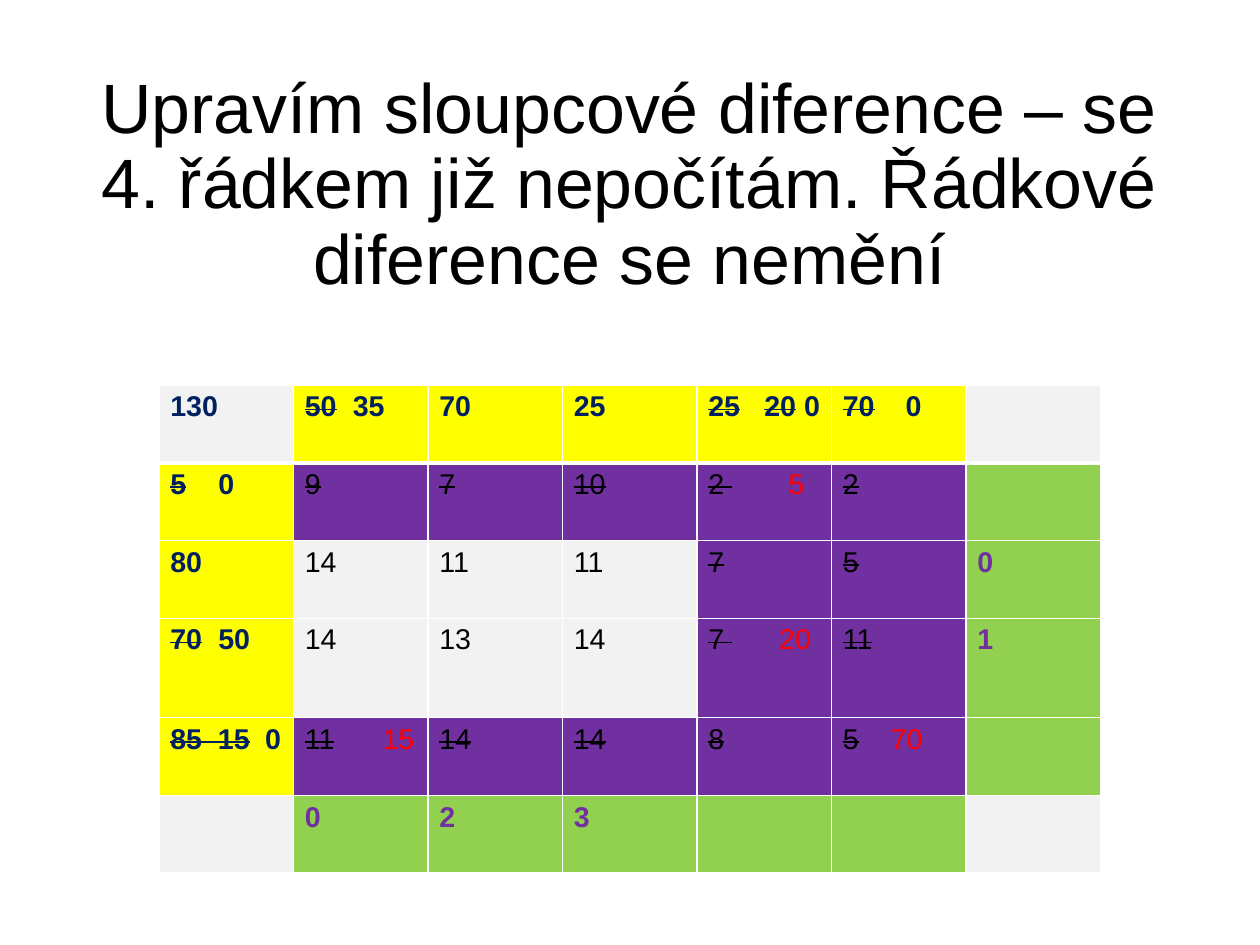
from lxml.etree import SubElement
from pptx import Presentation
from pptx.dml.color import RGBColor
from pptx.enum.text import MSO_ANCHOR, MSO_AUTO_SIZE, PP_ALIGN
from pptx.oxml.ns import qn
from pptx.util import Inches, Pt

BLACK = RGBColor(0x00, 0x00, 0x00)
WHITE = RGBColor(0xFF, 0xFF, 0xFF)
NAVY = RGBColor(0x00, 0x20, 0x60)
RED = RGBColor(0xFF, 0x00, 0x00)
GREY = RGBColor(0xF2, 0xF2, 0xF2)
YELLOW = RGBColor(0xFF, 0xFF, 0x00)
PURPLE = RGBColor(0x70, 0x30, 0xA0)
GREEN = RGBColor(0x92, 0xD0, 0x50)

# Parts of a cell stand at tab stops, split by "|".
# Marks: "-" struck out, "!" red, "+" after a plain space instead of a tab.
ROWS = [
    ["130", "-50|35", "70", "25", "-25|-20|+0", "-70|0", ""],
    ["-5|0", "-9", "-7", "-10", "-2 |!5", "-2", ""],
    ["80", "14", "11", "11", "-7", "-5", "0"],
    ["-70|50", "14", "13", "14", "-7 |!20", "-11", "1"],
    ["-85  15|0", "-11|!15", "-14", "-14", "-8", "-5|!70", ""],
    ["", "0", "2", "3", "", "", ""],
]
HEIGHTS = [0.68, 0.68, 0.68, 0.87, 0.68, 0.68]
WIDTH = 8.24
STOPS = {
    (0, 1): 0.42, (0, 4): 0.49, (0, 5): 0.55,
    (1, 0): 0.42, (1, 4): 0.7,
    (3, 0): 0.42, (3, 4): 0.62,
    (4, 0): 0.83, (4, 1): 0.68, (4, 5): 0.42,
}


def add_run(para, text, color, bold=False, struck=False, size=18):
    run = para.add_run()
    run.text = text
    font = run.font
    font.name = "Arial"
    font.size = Pt(size)
    font.bold = bold
    font.color.rgb = color
    if struck:
        run.font._element.set("strike", "sngStrike")


def add_border(cell, side, points):
    line = SubElement(cell._tc.get_or_add_tcPr(), qn(f"a:ln{side}"), w=str(Pt(points)))
    fill = SubElement(line, qn("a:solidFill"))
    SubElement(fill, qn("a:srgbClr"), val=str(WHITE))


deck = Presentation()
# A sheet of 28 by 21 centimetres
deck.slide_width = Inches(11.024)
deck.slide_height = Inches(8.268)
slide = deck.slides.add_slide(deck.slide_layouts[5])

title = slide.shapes.title
title.left, title.top = Inches(0.55), Inches(0.94)
title.width, title.height = Inches(9.92), Inches(1.38)
frame = title.text_frame
frame.word_wrap = True
frame.auto_size = MSO_AUTO_SIZE.NONE
frame.vertical_anchor = MSO_ANCHOR.MIDDLE
frame.margin_left = frame.margin_right = 0
frame.margin_top = frame.margin_bottom = 0
para = frame.paragraphs[0]
para.alignment = PP_ALIGN.CENTER
para.line_spacing = 0.9
add_run(
    para,
    "Upravím sloupcové diference – se 4. řádkem již nepočítám. "
    "Řádkové diference se nemění",
    BLACK,
    size=44,
)

last_row, last_col = len(ROWS) - 1, len(ROWS[0]) - 1
table = slide.shapes.add_table(
    len(ROWS), len(ROWS[0]),
    Inches(1.39), Inches(3.37), Inches(WIDTH), Inches(sum(HEIGHTS)),
).table
table.first_row = False
table.horz_banding = False
for col in table.columns:
    col.width = Inches(WIDTH / len(ROWS[0]))
for row, height in zip(table.rows, HEIGHTS):
    row.height = Inches(height)

for r, texts in enumerate(ROWS):
    for c, text in enumerate(texts):
        cell = table.cell(r, c)
        if r in (0, last_row) and c in (0, last_col):
            fill, ink = GREY, NAVY
        elif r == 0 or c == 0:
            fill, ink = YELLOW, NAVY
        elif r == last_row or c == last_col:
            fill, ink = GREEN, PURPLE
        else:
            fill, ink = (PURPLE if text.startswith("-") else GREY), BLACK
        bold = ink != BLACK

        for side in "LRTB":
            thick = (r, side) in ((0, "B"), (1, "T"))
            add_border(cell, side, 3 if thick else 1)
        cell.fill.solid()
        cell.fill.fore_color.rgb = fill

        para = cell.text_frame.paragraphs[0]
        para.font.size = Pt(18)
        if (r, c) in STOPS:
            tabs = SubElement(para._p.get_or_add_pPr(), qn("a:tabLst"))
            # Tab stops come before the default run format.
            tabs.getparent().insert(0, tabs)
            SubElement(tabs, qn("a:tab"), pos=str(Inches(STOPS[r, c])), algn="l")
        if not text:
            continue
        for i, part in enumerate(text.split("|")):
            mark = part[0]
            if i:
                add_run(para, " " if mark == "+" else "\t", ink, bold)
            color = RED if mark == "!" else ink
            add_run(para, part.lstrip("-+!"), color, bold, mark == "-")

deck.save("out.pptx")
